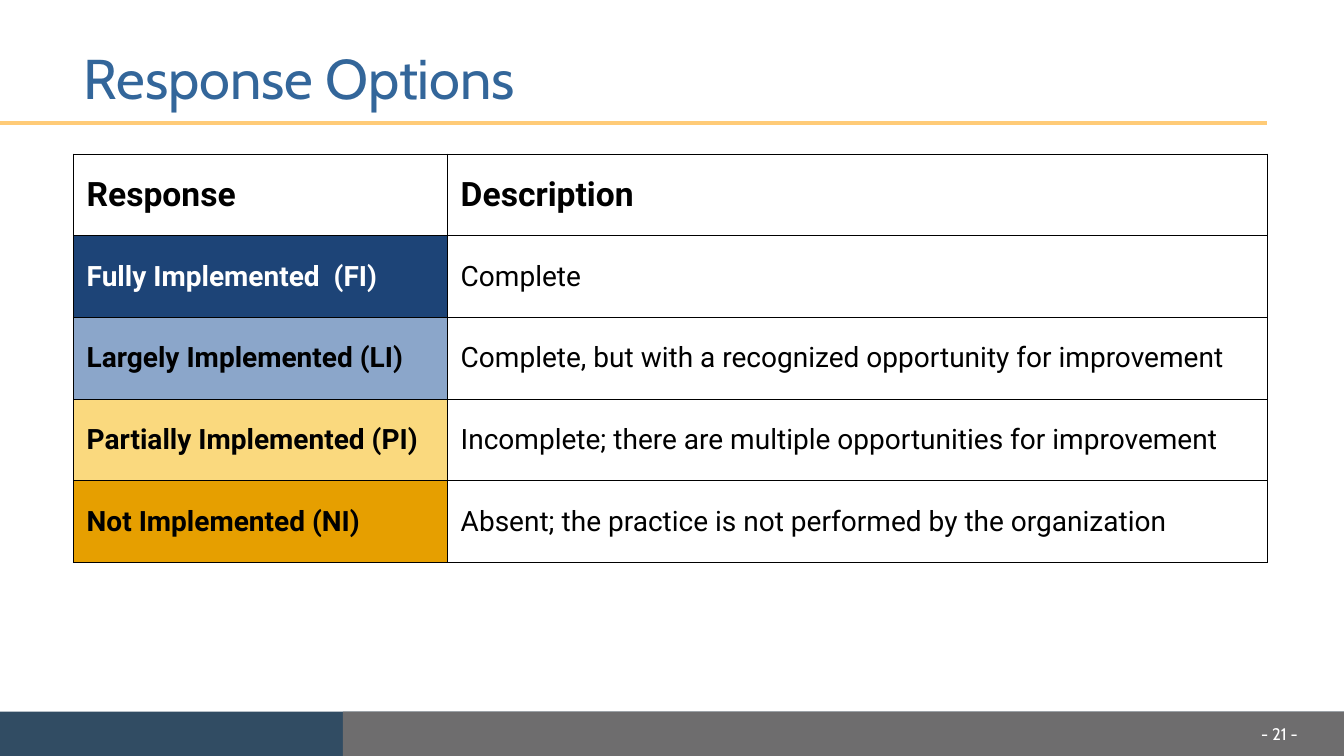
from lxml import etree
from pptx import Presentation
from pptx.dml.color import RGBColor
from pptx.enum.shapes import MSO_CONNECTOR, MSO_SHAPE
from pptx.enum.text import MSO_ANCHOR, MSO_AUTO_SIZE, PP_ALIGN
from pptx.oxml.ns import qn
from pptx.util import Inches, Pt

RECTANGLE = MSO_SHAPE.RECTANGLE
STRAIGHT = MSO_CONNECTOR.STRAIGHT
MIDDLE = MSO_ANCHOR.MIDDLE
LEFT, RIGHT = PP_ALIGN.LEFT, PP_ALIGN.RIGHT

TITLE = "Response Options"
PAGE_NUMBER = "- 21 -"
HEADERS = ("Response", "Description")
RESPONSES = [
    ("Fully Implemented  (FI)", "Complete", "navy", "white"),
    ("Largely Implemented (LI)", "Complete, but with a recognized opportunity for improvement", "sky", "black"),
    ("Partially Implemented (PI)", "Incomplete; there are multiple opportunities for improvement", "yellow", "black"),
    ("Not Implemented (NI)", "Absent; the practice is not performed by the organization", "amber", "black"),
]
COLORS = {
    "black": "000000", "white": "FFFFFF", "title": "33669A", "rule": "FFCB77",
    "footer_blue": "314C63", "footer_gray": "6E6D6E",
    "navy": "1D4477", "sky": "8BA6CA", "yellow": "FAD97E", "amber": "E69F00",
}
TITLE_FONT, TABLE_FONT = "Cabin", "Roboto"

SLIDE_WIDTH, SLIDE_HEIGHT = 13.33, 7.5
MARGIN_LEFT, CONTENT_WIDTH = 0.73, 11.84
CONTENT_RIGHT = MARGIN_LEFT + CONTENT_WIDTH
TITLE_TOP, TITLE_HEIGHT, RULE_TOP = 0.44, 0.74, 1.22
TABLE_TOP, ROW_HEIGHT = 1.53, 0.81
COLUMN_WIDTHS = (3.71, 8.13)
FOOTER_HEIGHT, FOOTER_SPLIT = 0.44, 3.4
FOOTER_TOP = SLIDE_HEIGHT - FOOTER_HEIGHT


def color(name):
    return RGBColor.from_string(COLORS[name])


def box(*lengths):
    return [Inches(length) for length in lengths]


def style(paragraph, font_name, size, color_name, bold=False, alignment=LEFT):
    paragraph.alignment = alignment
    font = paragraph.font
    font.name, font.size, font.bold = font_name, Pt(size), bold
    font.color.rgb = color(color_name)


def add_band(slide, left, right, color_name):
    band = slide.shapes.add_shape(RECTANGLE, *box(left, FOOTER_TOP, right - left, FOOTER_HEIGHT))
    band.shadow.inherit = False
    band.fill.solid()
    band.fill.fore_color.rgb = color(color_name)
    band.line.fill.background()


def add_rule(slide):
    rule = slide.shapes.add_connector(STRAIGHT, *box(0, RULE_TOP, CONTENT_RIGHT, RULE_TOP))
    rule.line.color.rgb = color("rule")
    rule.line.width = Pt(3)
    etree.SubElement(rule._element.spPr, qn("a:effectLst"))


def set_title(slide):
    title = slide.shapes.title
    title.left, title.top, title.width, title.height = box(MARGIN_LEFT, TITLE_TOP, CONTENT_WIDTH, TITLE_HEIGHT)
    frame = title.text_frame
    frame.text = TITLE
    frame.vertical_anchor = MIDDLE
    frame.auto_size = MSO_AUTO_SIZE.NONE
    frame.paragraphs[0].line_spacing = 0.9
    style(frame.paragraphs[0], TITLE_FONT, 40, "title")


def add_borders(cell):
    properties = cell._tc.get_or_add_tcPr()
    for position, side in enumerate(("lnL", "lnR", "lnT", "lnB")):
        border = etree.Element(qn(f"a:{side}"), w=str(Pt(1)))
        fill = etree.SubElement(border, qn("a:solidFill"))
        etree.SubElement(fill, qn("a:srgbClr"), val=COLORS["black"])
        properties.insert(position, border)


def fill_cell(cell, text, size, text_color, bold, fill_color=None):
    cell.text = text
    cell.vertical_anchor = MIDDLE
    cell.margin_left = cell.margin_right = Inches(0.13)
    cell.margin_top = cell.margin_bottom = Inches(0.07)
    style(cell.text_frame.paragraphs[0], TABLE_FONT, size, text_color, bold)
    if fill_color:
        cell.fill.solid()
        cell.fill.fore_color.rgb = color(fill_color)
    else:
        cell.fill.background()
    add_borders(cell)


def add_response_table(slide):
    row_count = len(RESPONSES) + 1
    table = slide.shapes.add_table(
        row_count, len(HEADERS), *box(MARGIN_LEFT, TABLE_TOP, CONTENT_WIDTH, ROW_HEIGHT * row_count)
    ).table
    table.first_row = table.horz_banding = False
    for column, width in zip(table.columns, COLUMN_WIDTHS):
        column.width = Inches(width)
    for row in table.rows:
        row.height = Inches(ROW_HEIGHT)
    for column, header in enumerate(HEADERS):
        fill_cell(table.cell(0, column), header, 24, "black", True)
    for row, (response, description, fill_color, text_color) in enumerate(RESPONSES, 1):
        fill_cell(table.cell(row, 0), response, 20, text_color, True, fill_color)
        fill_cell(table.cell(row, 1), description, 20, "black", False)


def add_page_number(slide):
    frame = slide.shapes.add_textbox(*box(11.57, 7.08, 1.4, 0.4)).text_frame
    frame.word_wrap = True
    frame.vertical_anchor = MIDDLE
    frame.text = PAGE_NUMBER
    style(frame.paragraphs[0], TITLE_FONT, 12, "white", alignment=RIGHT)


def main():
    presentation = Presentation()
    presentation.slide_width, presentation.slide_height = box(SLIDE_WIDTH, SLIDE_HEIGHT)
    slide = presentation.slides.add_slide(presentation.slide_layouts[5])
    add_band(slide, 0, SLIDE_WIDTH, "footer_blue")
    add_band(slide, FOOTER_SPLIT, SLIDE_WIDTH, "footer_gray")
    add_rule(slide)
    set_title(slide)
    add_response_table(slide)
    add_page_number(slide)
    presentation.save("out.pptx")


if __name__ == "__main__":
    main()
